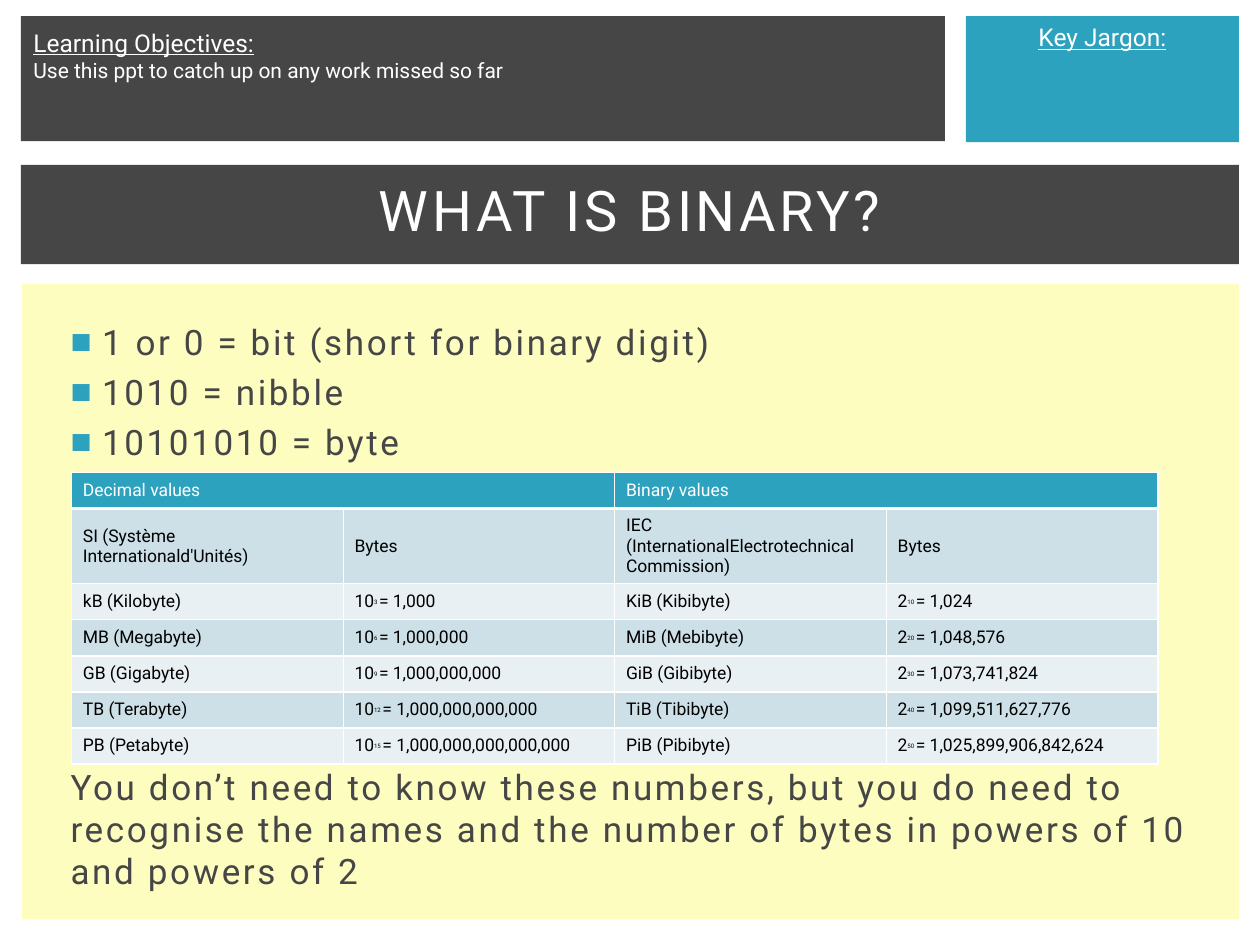
from dataclasses import dataclass

from lxml.etree import SubElement
from pptx import Presentation
from pptx.dml.color import RGBColor as Rgb
from pptx.enum.shapes import MSO_SHAPE as Shape
from pptx.enum.text import MSO_ANCHOR as Anchor, MSO_AUTO_SIZE as AutoSize, PP_ALIGN as Align
from pptx.oxml.ns import qn
from pptx.util import Pt


@dataclass(frozen=True)
class Theme:
    font: str = "Roboto"
    white: str = "FFFFFF"
    black: str = "000000"
    charcoal: str = "464646"
    teal: str = "2DA2BF"
    cream: str = "FCFDBF"
    bands: tuple = ("CDE0E8", "E8F0F4")
    title: int = 32
    body: int = 20
    heading: int = 14
    note: int = 12
    cell: int = 10
    exponent: int = 6


THEME = Theme()

DEFINITIONS = ["1 or 0 = bit (short for binary digit)", "1010 = nibble", "10101010 = byte"]
ADVICE = ("You don’t need to know these numbers, but you do need to recognise the names "
          "and the number of bytes in powers of 10 and powers of 2")

GROUPS = ["Decimal values", "Binary values"]
COLUMNS = ["SI (Système Internationald'Unités)", "Bytes",
           "IEC (InternationalElectrotechnical Commission)", "Bytes"]
# Each size: decimal name, exponent, value; binary name, exponent, value
UNITS = [
    ("kB (Kilobyte)", 3, "1,000", "KiB (Kibibyte)", 10, "1,024"),
    ("MB (Megabyte)", 6, "1,000,000", "MiB (Mebibyte)", 20, "1,048,576"),
    ("GB (Gigabyte)", 9, "1,000,000,000", "GiB (Gibibyte)", 30, "1,073,741,824"),
    ("TB (Terabyte)", 12, "1,000,000,000,000", "TiB (Tibibyte)", 40, "1,099,511,627,776"),
    ("PB (Petabyte)", 15, "1,000,000,000,000,000", "PiB (Pibibyte)", 50,
     "1,025,899,906,842,624"),
]


def place(shape, left, top, width, height):
    shape.left, shape.top, shape.width, shape.height = map(Pt, (left, top, width, height))


def set_font(paragraph, size, color, underline=None, spacing=None):
    font = paragraph.font
    font.name, font.size, font.underline = THEME.font, Pt(size), underline
    font.color.rgb = Rgb.from_string(color)
    if spacing:
        paragraph._p.pPr.find(qn("a:defRPr")).set("spc", str(int(spacing * 100)))


def set_indent(paragraph, left, first_line, bullet=None):
    props = paragraph._p.get_or_add_pPr()
    props.set("marL", str(Pt(left)))
    props.set("indent", str(Pt(first_line)))
    if bullet:
        color = SubElement(props, qn("a:buClr"))
        SubElement(color, qn("a:srgbClr"), val=THEME.teal)
        SubElement(props, qn("a:buFont"), typeface="Arial")
        SubElement(props, qn("a:buChar"), char=bullet)
    else:
        SubElement(props, qn("a:buNone"))


def add_panel(slide, color, left, top, width, height):
    """Add a plain rectangle behind the title and body."""
    panel = slide.shapes.add_shape(Shape.RECTANGLE, Pt(left), Pt(top), Pt(width), Pt(height))
    panel.shadow.inherit = False
    panel.fill.solid()
    panel.fill.fore_color.rgb = Rgb.from_string(color)
    panel.line.fill.background()
    slide.shapes.title._element.addprevious(panel._element)
    return panel


def write_panel(panel, heading, note=None, align=Align.LEFT, margin_top=3.6):
    frame = panel.text_frame
    frame.word_wrap = True
    frame.vertical_anchor = Anchor.TOP
    frame.margin_top = Pt(margin_top)
    title = frame.paragraphs[0]
    title.text, title.alignment = heading, align
    set_font(title, THEME.heading, THEME.white, underline=True)
    if note:
        detail = frame.add_paragraph()
        detail.text, detail.alignment = note, align
        set_font(detail, THEME.note, THEME.white)


def fill_title(title):
    place(title, 12.2, 94.3, 695.5, 57)
    frame = title.text_frame
    frame.auto_size = AutoSize.NONE
    frame.vertical_anchor = Anchor.TOP
    frame.margin_top = Pt(6)
    heading = frame.paragraphs[0]
    heading.text, heading.alignment = "WHAT IS BINARY?", Align.CENTER
    set_font(heading, THEME.title, THEME.white, spacing=2)


def fill_body(body):
    place(body, 29.5, 179.3, 661.7, 323.3)
    frame = body.text_frame
    frame.auto_size = AutoSize.NONE
    frame.text = "\n".join(DEFINITIONS + [ADVICE])
    *definitions, advice = frame.paragraphs
    for definition in definitions:
        set_indent(definition, 21.6, -18, "■")
        definition.space_before = Pt(4.7)
    set_indent(advice, 3.6, 0)
    advice.space_before = Pt(173)  # leaves room for the table
    for paragraph in frame.paragraphs:
        set_font(paragraph, THEME.body, THEME.charcoal, spacing=1.5)


def set_borders(cell, **widths):
    props = cell._tc.get_or_add_tcPr()
    for position, side in enumerate("LRTB"):
        line = props.makeelement(qn(f"a:ln{side}"), w=str(Pt(widths.get(side, 0.75))))
        fill = SubElement(line, qn("a:solidFill"))
        SubElement(fill, qn("a:srgbClr"), val=THEME.white)
        props.insert(position, line)


def write_cell(cell, parts, fill, color=THEME.black):
    """Write one text, or a (base, exponent, value) power."""
    cell.fill.solid()
    cell.fill.fore_color.rgb = Rgb.from_string(fill)
    cell.vertical_anchor = Anchor.MIDDLE
    cell.margin_left = cell.margin_right = Pt(6.5)
    cell.margin_top = cell.margin_bottom = Pt(3.4)
    paragraph = cell.text_frame.paragraphs[0]
    if isinstance(parts, str):
        paragraph.text = parts
    else:
        base, exponent, value = parts
        for text in (str(base), f"{exponent} ", f"= {value}"):
            paragraph.add_run().text = text
        raised = paragraph.runs[1]
        raised.font.size = Pt(THEME.exponent)
        raised._r.get_or_add_rPr().set("baseline", "30000")
    set_font(paragraph, THEME.cell, color)


def add_units_table(slide):
    rows = [COLUMNS] + [(si, (10, ten, decimal), iec, (2, two, binary))
                        for si, ten, decimal, iec, two, binary in UNITS]
    heights = [20.6, 42.9] + [20.6] * len(UNITS)
    table = slide.shapes.add_table(len(heights), len(COLUMNS), Pt(40.9), Pt(270.2),
                                   Pt(620.8), Pt(sum(heights))).table
    for row, height in zip(table.rows, heights):
        row.height = Pt(height)
    for number, group in enumerate(GROUPS):
        first, last = (table.cell(0, 2 * number + step) for step in (0, 1))
        first.merge(last)
        write_cell(first, group, THEME.teal, THEME.white)
        for cell in (first, last):
            set_borders(cell, B=2.14)
    for r, row in enumerate(rows, start=1):
        for c, parts in enumerate(row):
            cell = table.cell(r, c)
            write_cell(cell, parts, THEME.bands[(r - 1) % 2])
            set_borders(cell, T=2.14 if r == 1 else 0.75)


def main():
    deck = Presentation()
    deck.slide_width, deck.slide_height = Pt(720), Pt(540)
    slide = deck.slides.add_slide(deck.slide_layouts[1])

    jargon = add_panel(slide, THEME.teal, 552, 9.2, 156, 72)
    write_panel(jargon, "Key Jargon:", align=Align.CENTER)
    objectives = add_panel(slide, THEME.charcoal, 12, 9.2, 528, 71.4)
    write_panel(objectives, "Learning Objectives:",
                "Use this ppt to catch up on any work missed so far", margin_top=6.6)
    add_panel(slide, THEME.charcoal, 12, 94.3, 696, 56.7)
    add_panel(slide, THEME.cream, 12.5, 162.3, 695.5, 363)

    fill_title(slide.shapes.title)
    fill_body(slide.placeholders[1])
    add_units_table(slide)
    deck.save("out.pptx")


if __name__ == "__main__":
    main()
